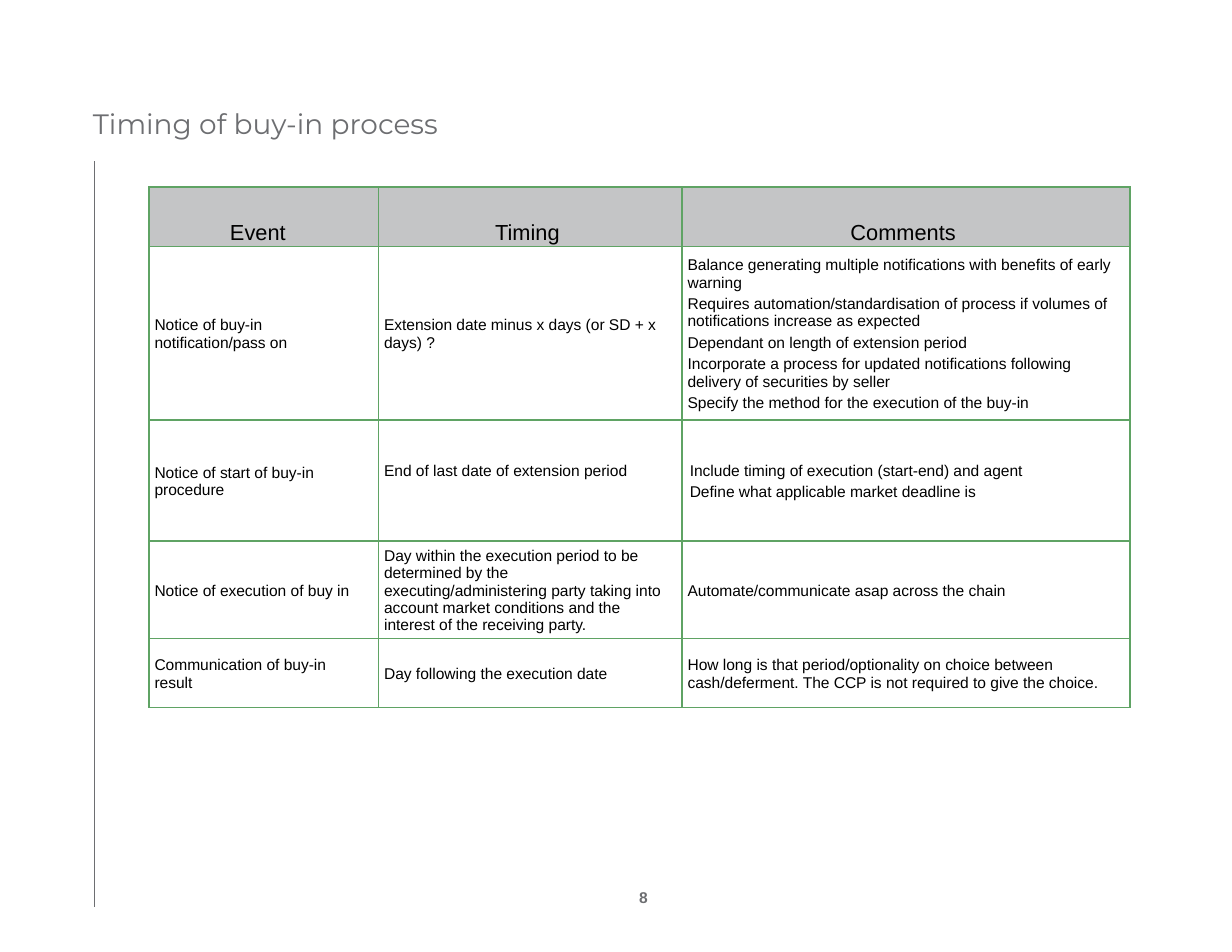
from lxml.etree import SubElement as Sub
from pptx import Presentation
from pptx.dml.color import RGBColor as RGB
from pptx.enum.shapes import MSO_CONNECTOR as Conn
from pptx.enum.text import MSO_ANCHOR as Anchor, PP_ALIGN as Align
from pptx.oxml.ns import qn
from pptx.util import Inches, Pt

GREY, GREEN, SHADE, BLACK = "6D6E71", "5FA364", "C4C5C6", "000000"
COLS = [2.05, 2.71, 4]
HEIGHTS = [0.53, 1.55, 1.08, 0.87, 0.62]

# Each cell is a list of paragraphs
ROWS = [
    [["Event "], ["Timing"], ["Comments"]],
    [["Notice of buy-in notification/pass on"],
     ["Extension date minus x days (or SD + x days) ?"],
     ["Balance generating multiple notifications with benefits of early warning",
      "Requires automation/standardisation of process if volumes of "
      "notifications increase as expected",
      "Dependant on length of extension period",
      "Incorporate a process for updated notifications following delivery of "
      "securities by seller",
      "Specify the method for the execution of the buy-in"]],
    [["Notice of start of buy-in procedure"],
     ["End of last date of extension period"],
     ["Include timing of execution (start-end) and agent",
      "Define what applicable market deadline is"]],
    [["Notice of execution of buy in"],
     ["Day within the execution period to be determined by the "
      "executing/administering party taking into account market conditions "
      "and the interest of the receiving party."],
     ["Automate/communicate asap across the chain"]],
    [["Communication of buy-in result"],
     ["Day following the execution date"],
     ["How long is that period/optionality on choice between cash/deferment. "
      "The CCP is not required to give the choice."]],
]


def paint(font, name, size, color, bold=False):
    font.name, font.size, font.bold = name, Pt(size), bold
    font.color.rgb = RGB.from_string(color)


def inset(box, left=0, top=0, right=0, bottom=0):
    box.margin_left, box.margin_top = Inches(left), Inches(top)
    box.margin_right, box.margin_bottom = Inches(right), Inches(bottom)


def place(shape, *box):
    shape.left, shape.top, shape.width, shape.height = map(Inches, box)


def add_rule(slide):
    rule = slide.shapes.add_connector(
        Conn.STRAIGHT, *map(Inches, (0.84, 1.44, 0.84, 8.1)))
    rule.line.color.rgb = RGB.from_string(GREY)
    rule.line.width = Pt(0.35)
    Sub(rule._element.spPr, qn("a:effectLst"))


def set_title(slide, text):
    title = slide.shapes.title
    place(title, 0.83, 0.58, 9, 0.67)
    frame = title.text_frame
    frame.text = text
    frame.vertical_anchor = Anchor.BOTTOM
    inset(frame)
    para = frame.paragraphs[0]
    para.alignment, para.line_spacing = Align.LEFT, Pt(27.9)
    paint(para.font, "Montserrat", 18, GREY)


def edge(cell):
    props = cell._tc.get_or_add_tcPr()
    for side in ("lnL", "lnR", "lnT", "lnB"):
        line = Sub(props, qn("a:" + side), w=str(Pt(1)))
        fill = Sub(line, qn("a:solidFill"))
        Sub(fill, qn("a:srgbClr"), val=GREEN)


def fill_cell(cell, lines, head):
    edge(cell)
    inset(cell, 0.05, 0.02, 0.1, 0.01 if head else 0)
    cell.vertical_anchor = Anchor.BOTTOM if head else Anchor.MIDDLE
    if head:
        cell.fill.solid()
        cell.fill.fore_color.rgb = RGB.from_string(SHADE)
    else:
        cell.fill.background()
    cell.text = "\n".join(lines)
    for num, para in enumerate(cell.text_frame.paragraphs):
        para.alignment = Align.CENTER if head else Align.LEFT
        para.space_before = Pt(2.6 if num else 0)
        para.space_after = Pt(1 if head else 0)
        paint(para.font, "Arial", 14 if head else 10, BLACK)


def add_grid(slide):
    box = map(Inches, (1.33, 1.67, sum(COLS), sum(HEIGHTS)))
    grid = slide.shapes.add_table(len(ROWS), len(COLS), *box).table
    grid.first_row = grid.horz_banding = False
    for col, width in zip(grid.columns, COLS):
        col.width = Inches(width)
    for row, (height, cells) in enumerate(zip(HEIGHTS, ROWS)):
        grid.rows[row].height = Inches(height)
        for col, lines in enumerate(cells):
            fill_cell(grid.cell(row, col), lines, row == 0)
    # The start row sits slightly off the common insets
    grid.cell(2, 1).margin_bottom = Inches(0.18)
    grid.cell(2, 2).margin_left = Inches(0.07)


def add_number(slide, text):
    box = slide.shapes.add_textbox(*map(Inches, (5.66, 7.93, 0.17, 0.17)))
    frame = box.text_frame
    frame.text = text
    frame.word_wrap = False
    frame.vertical_anchor = Anchor.MIDDLE
    inset(frame)
    para = frame.paragraphs[0]
    para.alignment = Align.CENTER
    paint(para.font, "Arial", 10, GREY, True)


def main():
    deck = Presentation()
    deck.slide_width, deck.slide_height = Inches(11), Inches(8.5)
    slide = deck.slides.add_slide(deck.slide_layouts[5])
    add_rule(slide)
    set_title(slide, "Timing of buy-in process")
    add_grid(slide)
    add_number(slide, "8")
    deck.save("out.pptx")


if __name__ == "__main__":
    main()
